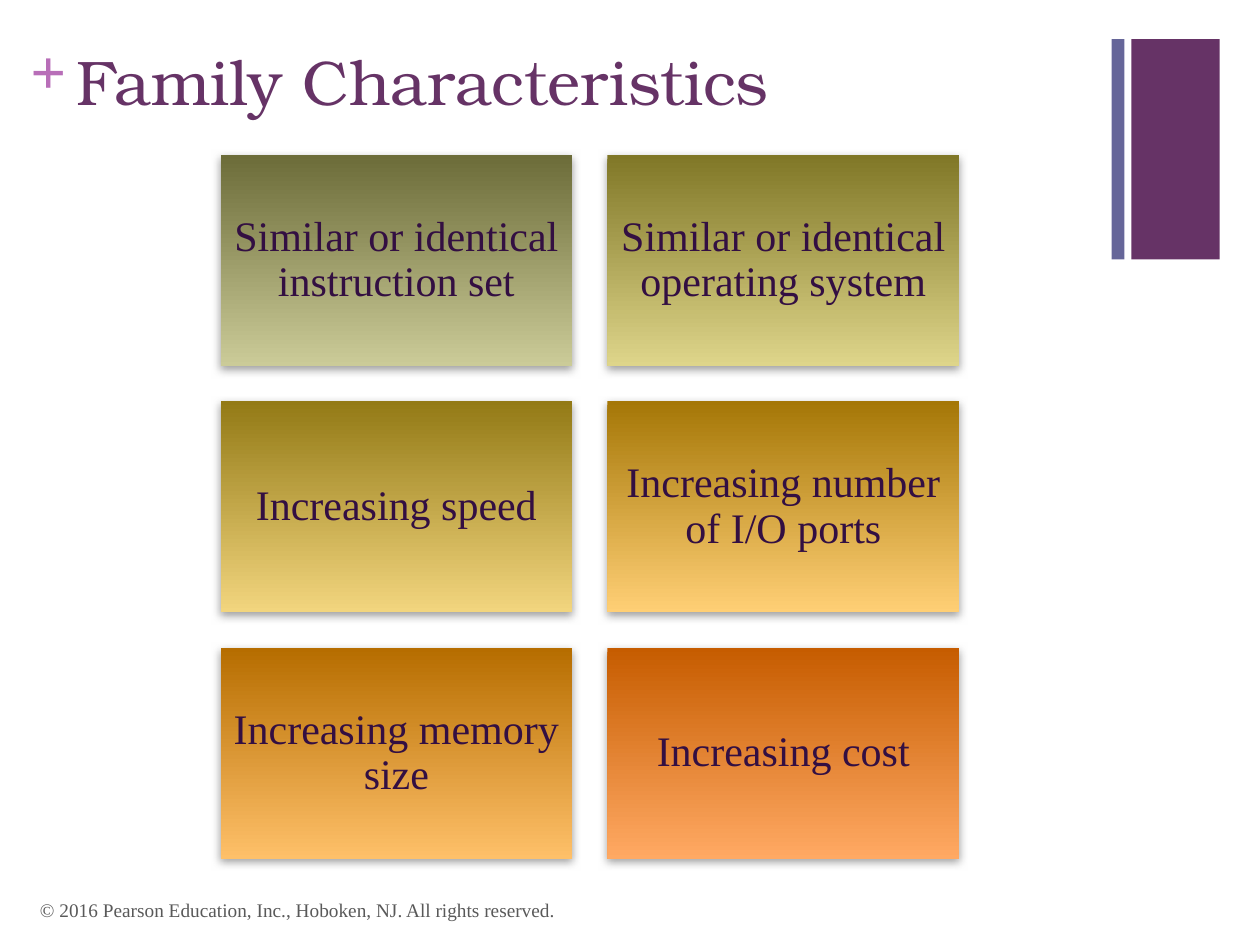
"""Build the Family Characteristics slide with its grid of six gradient tiles."""
from lxml.etree import SubElement
from pptx import Presentation
from pptx.dml.color import RGBColor as RGB
from pptx.enum.shapes import MSO_SHAPE as Shape
from pptx.enum.text import MSO_ANCHOR as Anchor, PP_ALIGN as Align
from pptx.oxml.ns import qn
from pptx.util import Pt

COLORS = {
    "purple": "663366",
    "slate": "666699",
    "orchid": "B86EB8",
    "tile_text": "330F42",
    "footer": "595959",
    "shadow": "808080",
}
SERIF = "Times New Roman"
TILES = [
    ("Similar or identical instruction set", "6C6C39", "CBCB98"),
    ("Similar or identical operating system", "807727", "DED58A"),
    ("Increasing speed", "937A16", "F2D57E"),
    ("Increasing number of I/O ports", "A57707", "FFCF75"),
    ("Increasing memory size", "B66D00", "FEC069"),
    ("Increasing cost", "C65C00", "FFA963"),
]
COLUMNS = 2
GRID_LEFT, GRID_TOP = 126, 88.5
TILE_WIDTH, TILE_HEIGHT, GAP = 201, 120.7, 20.1


def write(shape, text, font_name, size, color, insets, anchor=Anchor.TOP):
    frame = shape.text_frame
    frame.word_wrap = True
    frame.vertical_anchor = anchor
    frame.margin_left = frame.margin_right = Pt(insets[0])
    frame.margin_top = frame.margin_bottom = Pt(insets[1])
    para = frame.paragraphs[0]
    para.text = text
    para.font.name = font_name
    para.font.size = Pt(size)
    para.font.color.rgb = RGB.from_string(COLORS[color])
    return para


def add_block(left, top, width, height):
    block = page.shapes.add_shape(Shape.RECTANGLE, Pt(left), Pt(top), Pt(width), Pt(height))
    block.line.fill.background()
    block.shadow.inherit = False
    return block


deck = Presentation()
deck.slide_width, deck.slide_height = Pt(720), Pt(540)
page = deck.slides.add_slide(deck.slide_layouts[6])

for left, width, color in [(646.5, 50.5, "purple"), (635.3, 7.2, "slate")]:
    bar = add_block(left, 22.3, width, 126)
    bar.fill.solid()
    bar.fill.fore_color.rgb = RGB.from_string(COLORS[color])

plus = page.shapes.add_textbox(Pt(17.3), Pt(18), Pt(21), Pt(44))
write(plus, "+", SERIF, 36, "orchid", (0, 0)).font.bold = True

title = page.shapes.add_textbox(Pt(36.7), Pt(20.9), Pt(595), Pt(88))
write(title, "Family Characteristics", "TeX Gyre Bonum", 36, "purple", (7.2, 3.6))

for index, (text, dark, light) in enumerate(TILES):
    row, column = divmod(index, COLUMNS)
    tile = add_block(GRID_LEFT + column * (TILE_WIDTH + GAP),
                     GRID_TOP + row * (TILE_HEIGHT + GAP), TILE_WIDTH, TILE_HEIGHT)
    tile.fill.gradient()
    tile.fill.gradient_angle = 270
    for stop, position, color in zip(tile.fill.gradient_stops, (0, 1), (dark, light)):
        stop.position = position
        stop.color.rgb = RGB.from_string(color)
    effects = tile.element.spPr.find(qn("a:effectLst"))
    shadow = SubElement(effects, qn("a:outerShdw"), blurRad=str(Pt(5)), dist=str(Pt(2)),
                        dir="5400000", rotWithShape="0")
    shade = SubElement(shadow, qn("a:srgbClr"), val=COLORS["shadow"])
    SubElement(shade, qn("a:alpha"), val="75000")
    para = write(tile, text, SERIF, 24, "tile_text", (7.2, 7.2), Anchor.MIDDLE)
    para.alignment = Align.CENTER
    para.line_spacing = 0.9

footer = page.shapes.add_textbox(Pt(15.8), Pt(505.5), Pt(482.4), Pt(28.8))
write(footer, "© 2016 Pearson Education, Inc., Hoboken, NJ. All rights reserved.",
      SERIF, 11, "footer", (7.2, 3.6), Anchor.MIDDLE)

deck.save("out.pptx")
